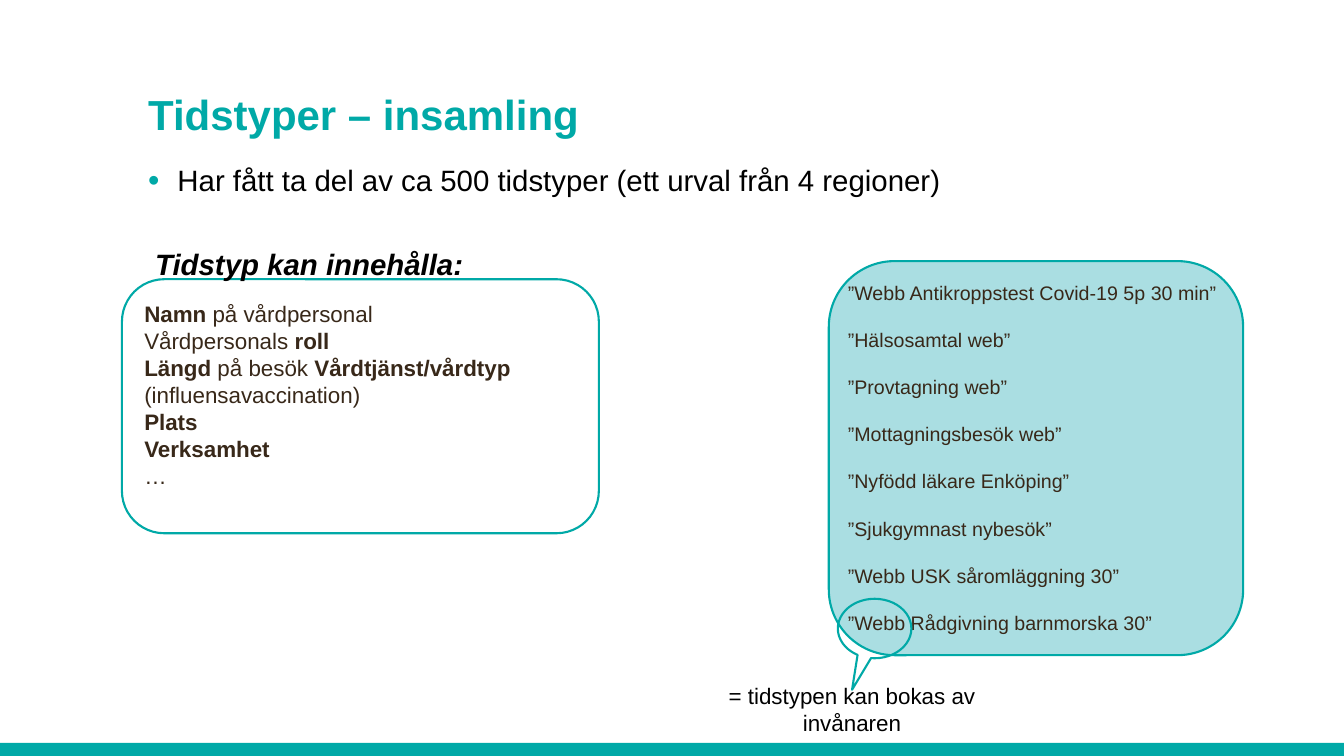
"""Build the slide about collected appointment types."""
from lxml.etree import SubElement
from pptx import Presentation
from pptx.dml.color import RGBColor
from pptx.enum.shapes import MSO_SHAPE
from pptx.enum.text import MSO_ANCHOR, MSO_AUTO_SIZE, PP_ALIGN
from pptx.oxml.ns import qn
from pptx.util import Inches, Pt

TEAL = RGBColor(0x00, 0xA9, 0xA7)
PALE_TEAL = RGBColor(0xAA, 0xDE, 0xE2)
BROWN = RGBColor(0x38, 0x28, 0x19)
BLACK = RGBColor(0x00, 0x00, 0x00)
WHITE = RGBColor(0xFF, 0xFF, 0xFF)


def add_run(paragraph, text, size, color, bold=False, italic=False):
    run = paragraph.add_run()
    run.text = text
    run.font.name = "Arial"
    run.font.size = Pt(size)
    run.font.color.rgb = color
    run.font.bold = bold
    run.font.italic = italic


def add_outline(preset, left, top, width, height, fill=None, line=TEAL):
    shape = slide.shapes.add_shape(
        preset, Inches(left), Inches(top), Inches(width), Inches(height))
    shape.shadow.inherit = False
    if fill is None:
        shape.fill.background()
    else:
        shape.fill.solid()
        shape.fill.fore_color.rgb = fill
    if line is None:
        shape.line.fill.background()
    else:
        shape.line.color.rgb = line
        shape.line.width = Pt(1.5)
    return shape


prs = Presentation()
prs.slide_width = Inches(13.33)
prs.slide_height = Inches(7.5)
slide = prs.slides.add_slide(prs.slide_layouts[1])

add_outline(MSO_SHAPE.RECTANGLE, 0, 7.37, 13.33, 0.13, TEAL, None)

title = slide.shapes.title
summary = slide.placeholders[1]
for holder, top, height, anchor in (
        (title, 0.36, 1.02, MSO_ANCHOR.BOTTOM),
        (summary, 1.54, 5.4, MSO_ANCHOR.TOP)):
    holder.left, holder.top = Inches(1.47), Inches(top)
    holder.width, holder.height = Inches(10.39), Inches(height)
    frame = holder.text_frame
    frame.auto_size = MSO_AUTO_SIZE.NONE
    frame.vertical_anchor = anchor
    frame.margin_left = frame.margin_right = 0
    frame.margin_top = frame.margin_bottom = 0
    frame.paragraphs[0].alignment = PP_ALIGN.LEFT
    frame.paragraphs[0].space_before = Pt(0)

add_run(title.text_frame.paragraphs[0], "Tidstyper – insamling", 30, TEAL, bold=True)

point = summary.text_frame.paragraphs[0]
point.line_spacing = 1.2
properties = point._p.get_or_add_pPr()
properties.set("marL", str(Inches(0.29)))
properties.set("indent", str(Inches(-0.29)))
bullet_color = SubElement(properties, qn("a:buClr"))
SubElement(bullet_color, qn("a:srgbClr"), val=str(TEAL))
SubElement(properties, qn("a:buSzPct"), val="110000")
SubElement(properties, qn("a:buFont"), typeface="Arial")
SubElement(properties, qn("a:buChar"), char="•")
add_run(point, "Har fått ta del av ca 500 tidstyper (ett urval från 4 regioner)", 21, BLACK)

add_outline(MSO_SHAPE.ROUNDED_RECTANGLE, 8.22, 2.59, 4.11, 3.91, PALE_TEAL)
examples = slide.shapes.add_textbox(
    Inches(8.31), Inches(2.74), Inches(4.02), Inches(3.7)).text_frame
examples.word_wrap = True
for index, name in enumerate((
        "Webb Antikroppstest Covid-19 5p 30 min",
        "Hälsosamtal web",
        "Provtagning web",
        "Mottagningsbesök web",
        "Nyfödd läkare Enköping",
        "Sjukgymnast nybesök",
        "Webb USK såromläggning 30",
        "Webb Rådgivning barnmorska 30")):
    example = examples.add_paragraph() if index else examples.paragraphs[0]
    example.space_before = Pt(16.8 if index else 0)
    add_run(example, f"”{name}”", 14, BROWN)

contents = add_outline(
    MSO_SHAPE.ROUNDED_RECTANGLE, 1.21, 2.77, 4.73, 2.52, WHITE).text_frame
contents.word_wrap = True
contents.vertical_anchor = MSO_ANCHOR.MIDDLE
contents.margin_bottom = Inches(0.28)
for index, parts in enumerate((
        (("Namn", True), (" på vårdpersonal", False)),
        (("Vårdpersonals ", False), ("roll", True)),
        (("Längd ", True), ("på besök ", False),
         ("Vårdtjänst/vårdtyp", True), (" (influensavaccination)", False)),
        (("Plats", True),),
        (("Verksamhet", True),),
        (("…", False),))):
    content = contents.add_paragraph() if index else contents.paragraphs[0]
    content.alignment = PP_ALIGN.LEFT
    for text, bold in parts:
        add_run(content, text, 16, BROWN, bold)

web_callout = add_outline(MSO_SHAPE.OVAL_CALLOUT, 8.31, 5.94, 0.73, 0.59)
web_callout.adjustments[0] = -0.306
web_callout.adjustments[1] = 1.03

explanation = slide.shapes.add_textbox(
    Inches(7.11), Inches(6.72), Inches(2.68), Inches(0.64)).text_frame
explanation.word_wrap = True
explanation.paragraphs[0].alignment = PP_ALIGN.CENTER
add_run(explanation.paragraphs[0], "= tidstypen kan bokas av invånaren", 16, BLACK)

heading = slide.shapes.add_textbox(
    Inches(1.44), Inches(2.39), Inches(3.5), Inches(0.38)).text_frame
heading.word_wrap = True
add_run(heading.paragraphs[0], "Tidstyp kan innehålla:", 21, BLACK, True, True)

prs.save("out.pptx")
